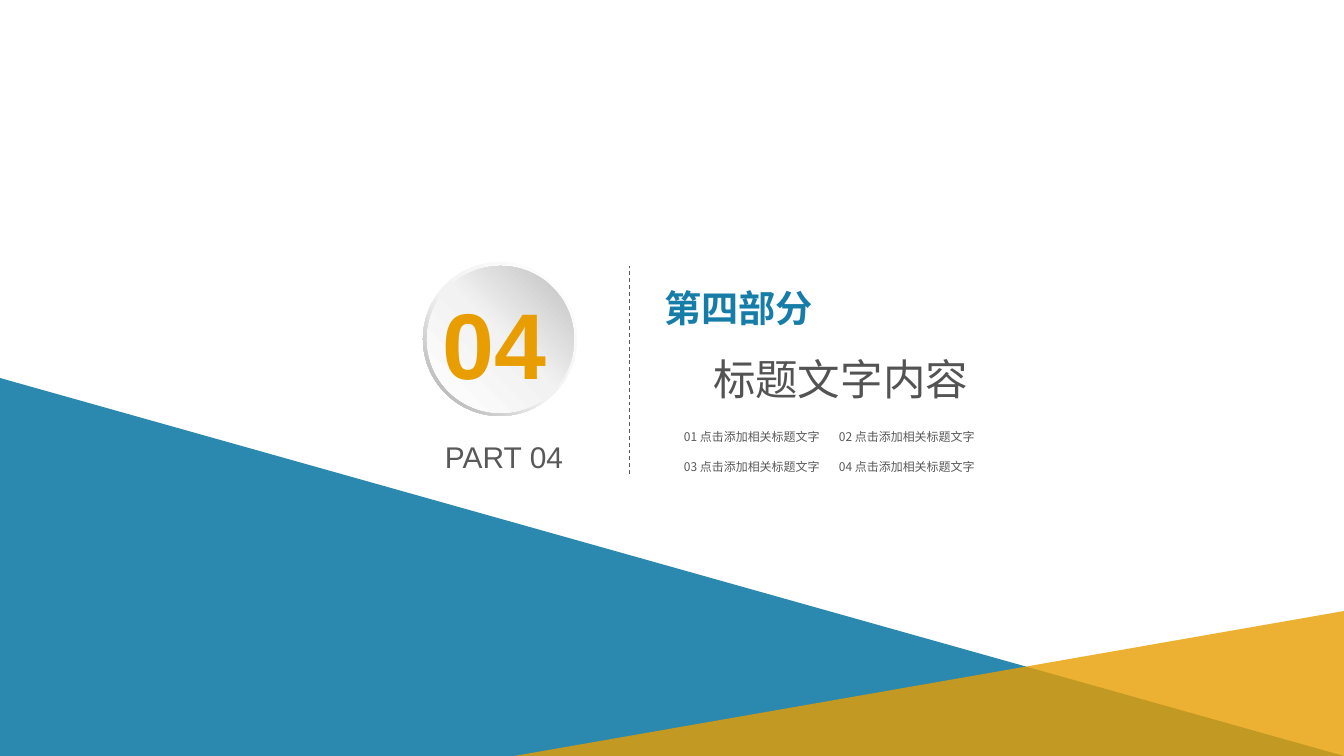
import pptx
import pptx.util
import pptx.dml.color
import pptx.enum.dml
import pptx.enum.shapes
import pptx.enum.text
import pptx.oxml
import pptx.oxml.ns

PX = 914400 / 95.6
SLIDE = (1344, 756)
COLORS = {"blue": "157DA8", "gold": "E89E00", "title": "535353", "gray": "595959"}
CJK, LATIN = "Noto Sans CJK SC", "Arial"

TRIANGLES = [
    ([(0, 378), (1344, 756), (0, 756)], "blue", 90),
    ([(1344, 611), (514, 756), (1344, 756)], "gold", 80),
]
BADGE = [
    ("DONUT", (423, 262, 154, 154), [(0, "FFFFFF"), (55, "F2F2F2"), (100, "A6A6A6")], 135),
    ("OVAL", (427, 266, 147, 147), [(0, "FFFFFF"), (51, "F2F2F2"), (100, "BFBFBF")], 315),
]
DIVIDER = (630, 474, 630, 266)
TITLE = ("标题文字内容", (713, 348, 300, 62), 32, CJK, "title", False)
LABELS = [
    ("第四部分", (664, 285, 160, 54), 28, CJK, "blue", True),
    ("PART 04", (445, 439, 133, 36), 22.5, LATIN, "gray", False),
    ("04", (443, 286, 133, 113), 70.3, LATIN, "gold", True),
]
TOPICS = [
    ["01 点击添加相关标题文字", "02 点击添加相关标题文字"],
    ["03 点击添加相关标题文字", "04 点击添加相关标题文字"],
]
TOPIC_LEFT, TOPIC_TOP, TOPIC_STEP_X, TOPIC_STEP_Y = 684, 430, 155, 30
TOPIC_SIZE = (150, 16)


def emu(*lengths):
    return [pptx.util.Emu(round(length * PX)) for length in lengths]


def rgb(name):
    return pptx.dml.color.RGBColor.from_string(COLORS[name])


def write(holder, words, box, size, typeface, color, bold):
    holder.left, holder.top, holder.width, holder.height = emu(*box)
    frame = holder.text_frame
    frame.margin_left = frame.margin_right = frame.margin_top = frame.margin_bottom = 0
    frame.auto_size = pptx.enum.text.MSO_AUTO_SIZE.NONE
    frame.word_wrap = False
    paragraph = frame.paragraphs[0]
    paragraph.alignment = pptx.enum.text.PP_ALIGN.LEFT
    run = paragraph.add_run()
    run.text = words
    run.font.size = pptx.util.Pt(size)
    run.font.bold = bold
    run.font.name = typeface
    run.font.color.rgb = rgb(color)
    east_asian = pptx.oxml.parse_xml(
        f'<a:ea {pptx.oxml.ns.nsdecls("a")} typeface="{typeface}"/>')
    run.font._element.append(east_asian)


def add_triangle(shapes, corners, color, opacity):
    builder = shapes.build_freeform(*corners[0], scale=PX)
    builder.add_line_segments(corners[1:], close=True)
    triangle = builder.convert_to_shape()
    triangle.shadow.inherit = False
    triangle.line.fill.background()
    triangle.fill.solid()
    triangle.fill.fore_color.rgb = rgb(color)
    tint = triangle._element.spPr.find(".//" + pptx.oxml.ns.qn("a:srgbClr"))
    tint.append(pptx.oxml.parse_xml(
        f'<a:alpha {pptx.oxml.ns.nsdecls("a")} val="{opacity * 1000}"/>'))


def add_disc(shapes, kind, box, stops, angle):
    disc = shapes.add_shape(pptx.enum.shapes.MSO_SHAPE[kind], *emu(*box))
    if kind == "DONUT":
        disc.adjustments[0] = 0.05
    disc.shadow.inherit = False
    disc.line.fill.background()
    stop_xml = "".join(
        f'<a:gs pos="{place * 1000}"><a:srgbClr val="{shade}"/></a:gs>'
        for place, shade in stops)
    gradient = pptx.oxml.parse_xml(
        f'<a:gradFill {pptx.oxml.ns.nsdecls("a")} rotWithShape="1"><a:gsLst>{stop_xml}</a:gsLst>'
        f'<a:lin ang="{angle * 60000}" scaled="0"/></a:gradFill>')
    disc._element.spPr.find(pptx.oxml.ns.qn("a:prstGeom")).addnext(gradient)


def add_divider(shapes):
    divider = shapes.add_connector(
        pptx.enum.shapes.MSO_CONNECTOR.STRAIGHT, *emu(*DIVIDER))
    divider.line.color.rgb = rgb("gray")
    divider.line.width = pptx.util.Pt(0.75)
    divider.line.dash_style = pptx.enum.dml.MSO_LINE.DASH
    divider._element.spPr.append(pptx.oxml.parse_xml(
        f'<a:effectLst {pptx.oxml.ns.nsdecls("a")}/>'))


def main():
    deck = pptx.Presentation()
    deck.slide_width, deck.slide_height = emu(*SLIDE)
    slide = deck.slides.add_slide(deck.slide_layouts[5])
    shapes = slide.shapes

    write(shapes.title, *TITLE)
    for triangle in TRIANGLES:
        add_triangle(shapes, *triangle)
    add_divider(shapes)
    badge = shapes.add_group_shape()
    for disc in BADGE:
        add_disc(badge.shapes, *disc)

    topics = [
        (words, (TOPIC_LEFT + column * TOPIC_STEP_X, TOPIC_TOP + row * TOPIC_STEP_Y, *TOPIC_SIZE),
         9, CJK, "gray", False)
        for row, line in enumerate(TOPICS) for column, words in enumerate(line)]
    for label in LABELS + topics:
        write(shapes.add_textbox(0, 0, 0, 0), *label)

    deck.save("out.pptx")


if __name__ == "__main__":
    main()
